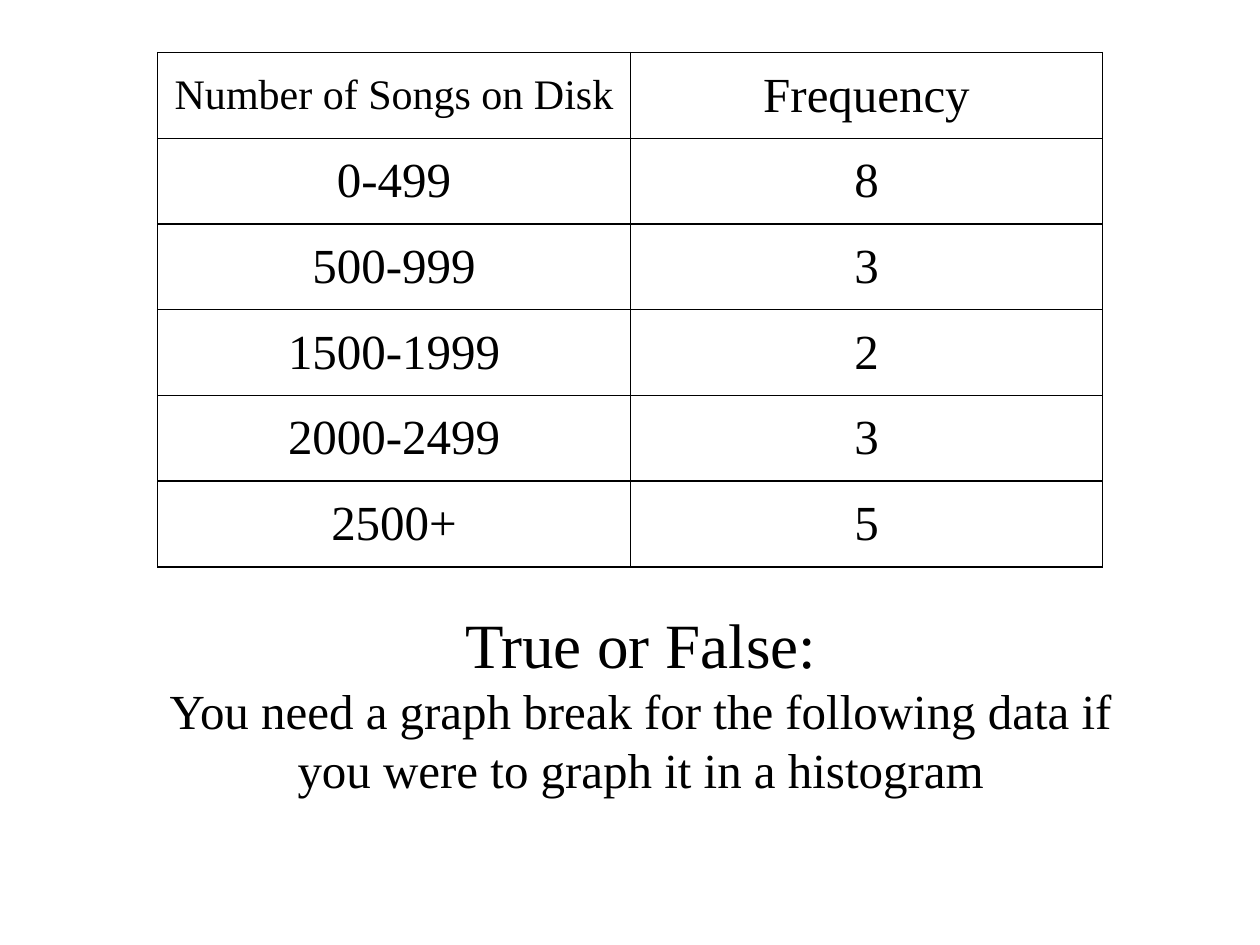
from lxml import etree
from pptx import Presentation
from pptx.dml.color import RGBColor
from pptx.enum.text import MSO_ANCHOR, MSO_AUTO_SIZE, PP_ALIGN
from pptx.oxml.ns import qn
from pptx.util import Cm, Pt

CENTER = PP_ALIGN.CENTER
MIDDLE = MSO_ANCHOR.MIDDLE
TOP = MSO_ANCHOR.TOP
GROW = MSO_AUTO_SIZE.SHAPE_TO_FIT_TEXT
TITLE_ONLY = 5
FONT = "Times New Roman"
BLACK = "000000"

FREQUENCIES = [
    ("Number of Songs on Disk", "Frequency"),
    ("0-499", "8"),
    ("500-999", "3"),
    ("1500-1999", "2"),
    ("2000-2499", "3"),
    ("2500+", "5"),
]
QUESTION = ("You need a graph break for the following data if "
            "you were to graph it in a histogram")


def rgb(hex_color):
    return RGBColor.from_string(hex_color)


def write(paragraph, text, size=28, color=BLACK, align=CENTER):
    paragraph.alignment = align
    run = paragraph.add_run()
    run.text = text
    run.font.name = FONT
    run.font.size = Pt(size)
    run.font.bold = False
    run.font.color.rgb = rgb(color)


def outline_cell(cell, color=BLACK, width=1):
    properties = cell._tc.get_or_add_tcPr()
    for position, side in enumerate(("a:lnL", "a:lnR", "a:lnT", "a:lnB")):
        line = etree.Element(qn(side), w=str(Pt(width)))
        fill = etree.SubElement(line, qn("a:solidFill"))
        etree.SubElement(fill, qn("a:srgbClr"), val=color)
        properties.insert(position, line)


def add_frequency_table(slide, left, top, width, height):
    row_count, column_count = len(FREQUENCIES), len(FREQUENCIES[0])
    table = slide.shapes.add_table(
        row_count, column_count, left, top, width, height).table
    table.first_row = False
    table.horz_banding = False
    for row, values in enumerate(FREQUENCIES):
        for column, value in enumerate(values):
            cell = table.cell(row, column)
            cell.vertical_anchor = MIDDLE
            cell.fill.background()
            outline_cell(cell)
            is_long_header = row == 0 and column == 0
            write(cell.text_frame.paragraphs[0], value,
                  size=24 if is_long_header else 28)


def place_question(slide, left, top, width, height):
    title = slide.shapes.title
    title.left, title.top, title.width, title.height = left, top, width, height
    frame = title.text_frame
    frame.word_wrap = True
    frame.auto_size = GROW
    frame.vertical_anchor = TOP
    write(frame.paragraphs[0], "True or False:", size=36)
    write(frame.add_paragraph(), QUESTION)


def main():
    presentation = Presentation()
    presentation.slide_width = Cm(25.4)
    presentation.slide_height = Cm(19.05)
    slide = presentation.slides.add_slide(
        presentation.slide_layouts[TITLE_ONLY])
    add_frequency_table(slide, Cm(3.18), Cm(1.06), Cm(19.05), Cm(10.37))
    place_question(slide, Cm(2.97), Cm(12.07), Cm(19.89), Cm(4.17))
    presentation.save("out.pptx")


if __name__ == "__main__":
    main()
